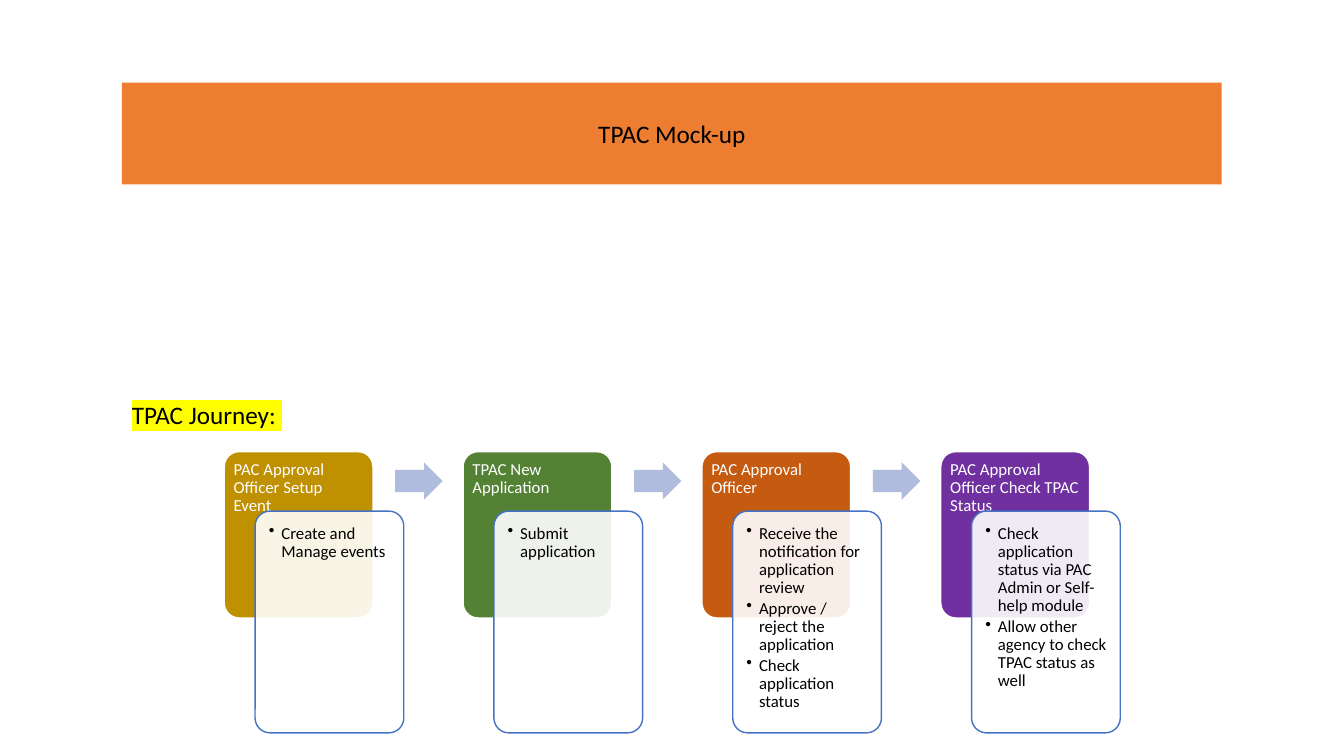
from lxml.etree import SubElement
from pptx import Presentation
from pptx.dml.color import RGBColor
from pptx.enum.shapes import MSO_SHAPE as Shape
from pptx.enum.text import MSO_ANCHOR as Anchor, PP_ALIGN as Align
from pptx.oxml.ns import qn
from pptx.util import Pt

COLORS = {
    "banner": "ED7D31", "black": "000000", "white": "FFFFFF",
    "gold": "BF9000", "green": "548235", "rust": "C55A11", "purple": "7030A0",
    "outline": "4472C4", "arrow": "B0BCDE", "highlight": "FFFF00",
}
STAGES = [
    ("PAC Approval Officer Setup Event", "gold", ["Create and Manage events"]),
    ("TPAC New Application", "green", ["Submit application"]),
    ("PAC Approval Officer", "rust", [
        "Receive the notification for application review",
        "Approve / reject the application",
        "Check application status"]),
    ("PAC Approval Officer Check TPAC Status", "purple", [
        "Check application status via PAC Admin or Self-help module",
        "Allow other agency to check TPAC status as well"]),
]
STAGE_PITCH = 170.6


def color(name):
    return RGBColor.from_string(COLORS[name])


def apply(target, values):
    for name, value in values.items():
        setattr(target, name, value)


def add_block(page, kind, box, fill, line=None, adjustments=()):
    block = page.shapes.add_shape(kind, *map(Pt, box))
    block.shadow.inherit = False
    block.fill.solid()
    block.fill.fore_color.rgb = color(fill)
    if line:
        block.line.color.rgb = color(line)
        block.line.width = Pt(1)
    else:
        block.line.fill.background()
    for index, value in enumerate(adjustments):
        block.adjustments[index] = value
    return block


def write(shape, lines, size, ink, frame_format, para_format):
    """Fill a shape with one paragraph per line and return the paragraphs."""
    frame = shape.text_frame
    apply(frame, {"word_wrap": True, **frame_format})
    for index, line in enumerate(lines):
        para = frame.add_paragraph() if index else frame.paragraphs[0]
        apply(para, para_format)
        span = para.add_run()
        span.text = line
        span.font.color.rgb = color(ink)
        apply(span.font, {"name": "Calibri", "size": Pt(size)})
    return frame.paragraphs


def add_bullet(para):
    props = para._p.get_or_add_pPr()
    apply_indent = {"marL": Pt(9), "indent": -Pt(9)}
    for name, value in apply_indent.items():
        props.set(name, str(value))
    SubElement(props, qn("a:buChar")).set("char", "•")


def add_banner(page, box):
    banner = add_block(page, Shape.RECTANGLE, box, "banner")
    write(banner, ["TPAC Mock-up"], 18, "black",
          {"vertical_anchor": Anchor.MIDDLE}, {"alignment": Align.CENTER})


def add_heading(page, box):
    heading = page.shapes.add_textbox(*map(Pt, box))
    para = write(heading, ["TPAC Journey: "], 18, "black", {}, {})[0]
    props = para.runs[0]._r.get_or_add_rPr()
    highlight = SubElement(props, qn("a:highlight"))
    SubElement(highlight, qn("a:srgbClr")).set("val", COLORS["highlight"])
    props.find(qn("a:solidFill")).addnext(highlight)


def add_stage(page, box, title, fill, tasks):
    left, top, width, height = box
    text_format = {"alignment": Align.LEFT, "line_spacing": 0.9}

    # Coloured header, partly covered by the card
    header = add_block(page, Shape.ROUNDED_RECTANGLE, box, fill, "white", [0.1])
    write(header, [title], 12, "white",
          {"vertical_anchor": Anchor.TOP, "margin_left": Pt(3.6),
           "margin_right": Pt(3.6), "margin_top": Pt(3.6)}, text_format)

    # Translucent task card
    card_box = (left + 22, top + 42.5, width, height * 4 / 3)
    card = add_block(page, Shape.ROUNDED_RECTANGLE, card_box,
                     "white", "outline", [0.1])
    tint = card.fill._xPr.find(qn("a:solidFill"))[0]
    SubElement(tint, qn("a:alpha")).set("val", "90000")
    margins = {f"margin_{side}": Pt(6.7)
               for side in ("left", "right", "top", "bottom")}
    paras = write(card, tasks, 12, "black",
                  {"vertical_anchor": Anchor.TOP, **margins},
                  {**text_format, "space_after": Pt(1.8)})
    for para in paras:
        add_bullet(para)


def add_journey(page, box):
    left, top, width, height = box
    for index, (title, fill, tasks) in enumerate(STAGES):
        stage_left = left + index * STAGE_PITCH
        add_stage(page, (stage_left, top, width, height), title, fill, tasks)
        # Arrow to the next stage
        if index < len(STAGES) - 1:
            add_block(page, Shape.RIGHT_ARROW,
                      (stage_left + 122.1, top + 7.7, 33.9, 26.6),
                      "arrow", adjustments=[0.6, 0.5])


def main():
    deck = Presentation()
    apply(deck, {"slide_width": Pt(960), "slide_height": Pt(540)})
    page = deck.slides.add_slide(deck.slide_layouts[6])
    add_banner(page, (87.1, 59, 785.5, 72.7))
    add_journey(page, (160.2, 322.6, 106.2, 118.8))
    add_heading(page, (87.1, 281.5, 306, 29))
    deck.save("out.pptx")


if __name__ == "__main__":
    main()
